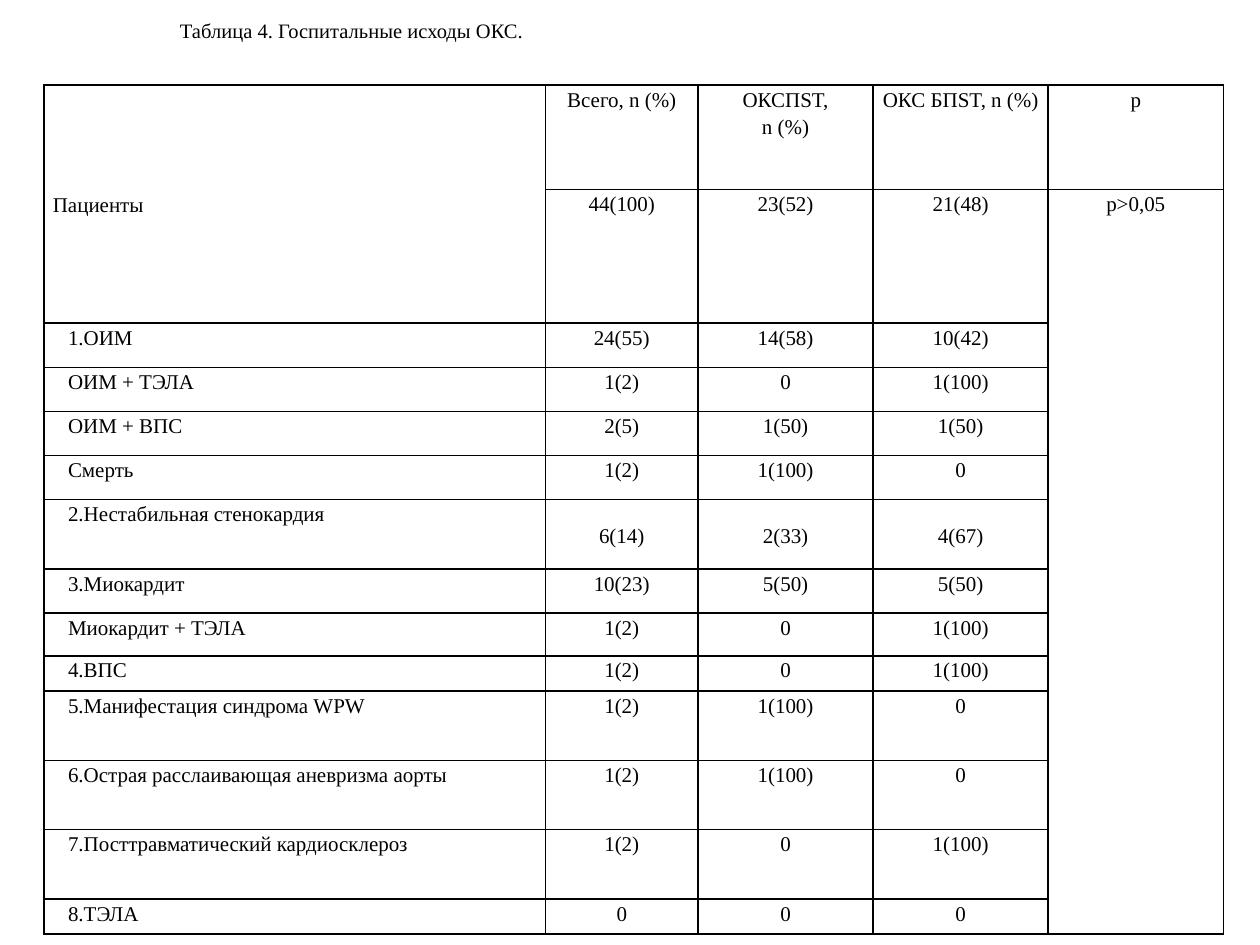
from lxml.etree import SubElement
from pptx import Presentation
from pptx.dml.color import RGBColor
from pptx.enum.text import MSO_ANCHOR, MSO_AUTO_SIZE, PP_ALIGN
from pptx.oxml.ns import qn
from pptx.util import Inches, Pt

COLORS = {"ink": "000000", "paper": "FFFFFF"}
WIDTH, HEIGHT = 10, 7.5
COLUMNS = [3.98] + [1.21] + [1.39] * 3
ROWS = [0.83, 1.06] + [0.35] * 4 + [0.55, 0.35, 0.34, 0.28] + [0.55] * 3 + [0.28]
HEADER = ["Пациенты", "Всего, n (%)", "ОКСПST,\nn (%)", "ОКС БПST, n (%)", "р"]
TOTALS = ["", "44(100)", "23(52)", "21(48)", "p>0,05"]
OUTCOMES = [
    ["1.ОИМ", "24(55)", "14(58)", "10(42)"],
    ["ОИМ + ТЭЛА", "1(2)", "0", "1(100)"],
    ["ОИМ + ВПС", "2(5)", "1(50)", "1(50)"],
    ["Смерть", "1(2)", "1(100)", "0"],
    ["2.Нестабильная стенокардия", "6(14)", "2(33)", "4(67)"],
    ["3.Миокардит", "10(23)", "5(50)", "5(50)"],
    ["Миокардит + ТЭЛА", "1(2)", "0", "1(100)"],
    ["4.ВПС", "1(2)", "0", "1(100)"],
    ["5.Манифестация синдрома WPW", "1(2)", "1(100)", "0"],
    ["6.Острая расслаивающая аневризма аорты", "1(2)", "1(100)", "0"],
    ["7.Посттравматический кардиосклероз", "1(2)", "0", "1(100)"],
    ["8.ТЭЛА", "0", "0", "0"],
]
ANGINA_ROW = 6


def write(frame, text, font, size, color, align=PP_ALIGN.LEFT, spacing=None, indent=0):
    frame.text = text
    for para in frame.paragraphs:
        para.alignment = align
        if spacing:
            para.line_spacing = spacing
        if indent:
            para._p.get_or_add_pPr().set("marL", str(Inches(indent)))
        for span in para.runs:
            span.font.name = font
            span.font.size = Pt(size)
            span.font.color.rgb = RGBColor.from_string(color)


class Sheet:
    font = "Times New Roman"

    def __init__(self, deck):
        self.page = deck.slides.add_slide(deck.slide_layouts[5])
        self.width, self.height = deck.slide_width, deck.slide_height

    def place(self, left, top, width, height):
        return (int(left * self.width), int(top * self.height),
                int(width * self.width), int(height * self.height))

    def title(self, text, *area):
        box = self.page.shapes.title
        box.left, box.top, box.width, box.height = self.place(*area)
        frame = box.text_frame
        frame.auto_size = MSO_AUTO_SIZE.NONE
        frame.vertical_anchor = MSO_ANCHOR.MIDDLE
        write(frame, text, self.font, 11.7, COLORS["ink"], PP_ALIGN.CENTER)

    def border(self, cell):
        properties = cell._tc.get_or_add_tcPr()
        for side in ("a:lnL", "a:lnR", "a:lnT", "a:lnB"):
            line = SubElement(properties, qn(side), w=str(Pt(1)))
            fill = SubElement(line, qn("a:solidFill"))
            SubElement(fill, qn("a:srgbClr"), val=COLORS["ink"])

    def table(self, left, top, columns, rows):
        area = self.place(left, top, sum(columns) / WIDTH, sum(rows) / HEIGHT)
        table = self.page.shapes.add_table(len(rows), len(columns), *area).table
        table.first_row = table.horz_banding = False
        for column, width in zip(table.columns, columns):
            column.width = Inches(width)
        for row, height in zip(table.rows, rows):
            row.height = Inches(height)
            for cell in row.cells:
                self.border(cell)
                cell.fill.solid()
                cell.fill.fore_color.rgb = RGBColor.from_string(COLORS["paper"])
                cell.margin_left = cell.margin_right = Inches(0.07)
                cell.margin_top = cell.margin_bottom = 0
        return table

    def cell(self, cell, text, anchor=MSO_ANCHOR.TOP, **style):
        cell.vertical_anchor = anchor
        write(cell.text_frame, text, self.font, 12, COLORS["ink"], spacing=1.15, **style)


def main():
    deck = Presentation()
    deck.slide_width, deck.slide_height = Inches(WIDTH), Inches(HEIGHT)
    sheet = Sheet(deck)
    sheet.title("Таблица 4. Госпитальные исходы ОКС.\v", 0.05, 0.04, 0.458, 0.081)
    table = sheet.table(0.035, 0.09, COLUMNS, ROWS)
    table.cell(0, 0).merge(table.cell(1, 0))
    table.cell(1, 4).merge(table.cell(len(ROWS) - 1, 4))
    for row, values in enumerate([HEADER, TOTALS] + OUTCOMES):
        for column, text in enumerate(values):
            if not text:
                continue
            style = {"align": PP_ALIGN.CENTER} if column else {"indent": 0.12 if row else 0}
            centred = (row, column) == (0, 0) or (row == ANGINA_ROW and column)
            anchor = MSO_ANCHOR.MIDDLE if centred else MSO_ANCHOR.TOP
            sheet.cell(table.cell(row, column), text, anchor, **style)
    deck.save("out.pptx")


if __name__ == "__main__":
    main()
